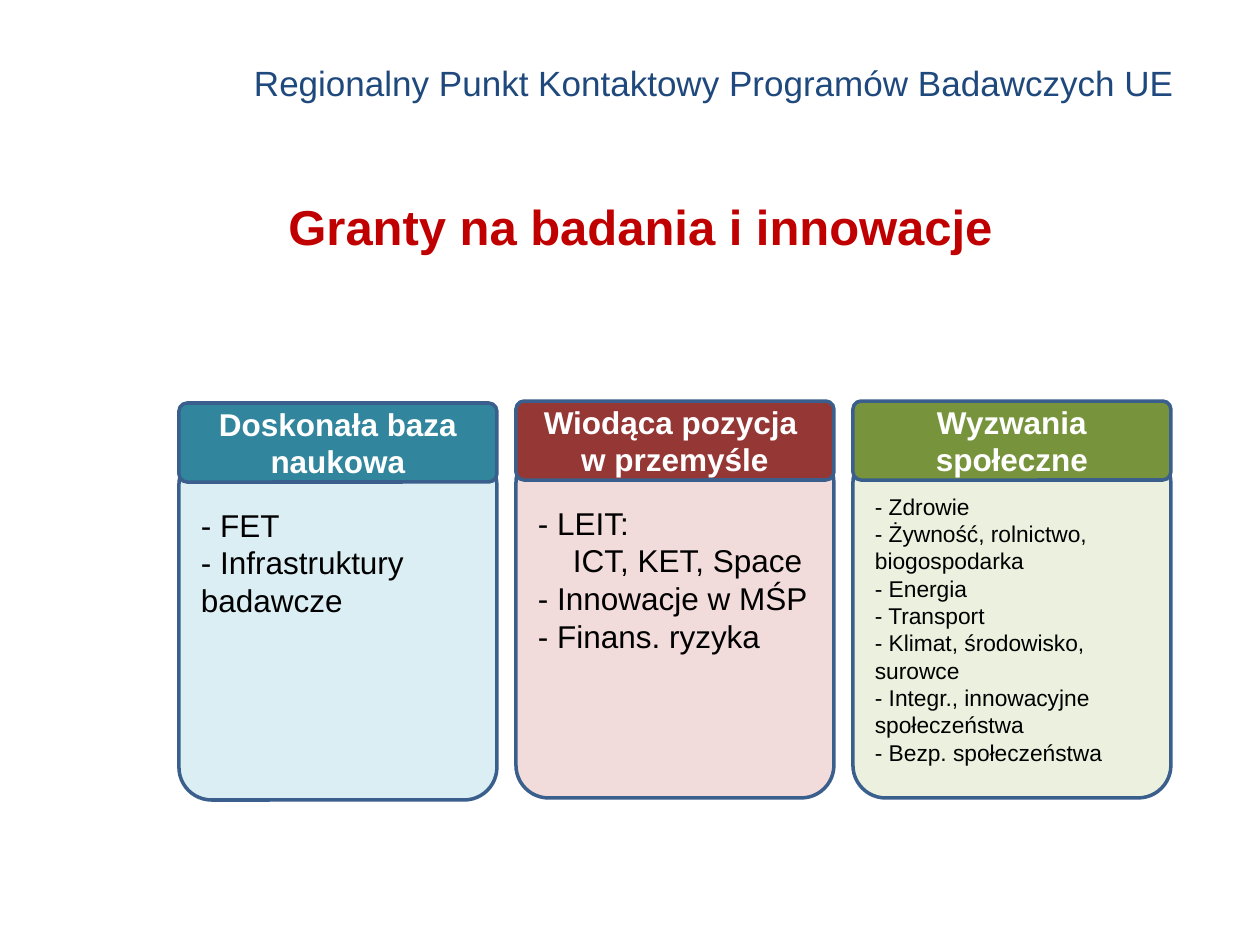
import pptx
import pptx.dml.color
import pptx.enum.shapes
import pptx.enum.text
import pptx.util

EMU_PER_PX = 914400 / 126
FONT = "Arial"
COLOURS = {
    "heading": "1F497D",
    "title": "C00000",
    "outline": "3A5F8C",
    "text": "000000",
    "label": "FFFFFF",
    "teal": "31859C",
    "teal_pale": "DBEEF4",
    "red": "953735",
    "red_pale": "F2DCDB",
    "green": "77933C",
    "green_pale": "EBF1DE",
}
ANCHOR = pptx.enum.text.MSO_ANCHOR
ALIGN = pptx.enum.text.PP_ALIGN

CARD_LEFT, CARD_PITCH, CARD_WIDTH = 179, 337, 318
LABEL_HEIGHT, BODY_OFFSET, BODY_HEIGHT = 79, 49, 348
INDENT = 35

CARDS = [
    ("Doskonała baza naukowa", "teal", 403, 18, 44,
     [("- FET", 0), ("- Infrastruktury badawcze", 0)]),
    ("Wiodąca pozycja \vw przemyśle", "red", 401, 18, 44,
     [("- LEIT:", 0), ("ICT, KET, Space", INDENT),
      ("- Innowacje w MŚP", 0), ("- Finans. ryzyka", 0)]),
    ("Wyzwania społeczne", "green", 401, 13, 33,
     [("- Zdrowie", 0), ("- Żywność, rolnictwo, biogospodarka", 0),
      ("- Energia", 0), ("- Transport", 0),
      ("- Klimat, środowisko, surowce", 0),
      ("- Integr., innowacyjne społeczeństwa", 0),
      ("- Bezp. społeczeństwa", 0)]),
]


def px(length):
    return pptx.util.Emu(round(length * EMU_PER_PX))


def colour(name):
    return pptx.dml.color.RGBColor.from_string(COLOURS[name])


def write(para, text, size=18, color="text", bold=False, align=ALIGN.LEFT, indent=0):
    para.text = text
    para.alignment = align
    para.space_before = pptx.util.Pt(0)
    if indent:
        para._p.get_or_add_pPr().set("marL", str(px(indent)))
    for span in para.runs:
        span.font.name = FONT
        span.font.size = pptx.util.Pt(size)
        span.font.bold = bold
        span.font.color.rgb = colour(color)


class SlideBuilder:
    def __init__(self, deck):
        self.page = deck.slides.add_slide(deck.slide_layouts[5])

    def frame(self, box, anchor=ANCHOR.TOP, top=6):
        frame = box.text_frame
        frame.word_wrap = True
        frame.auto_size = pptx.enum.text.MSO_AUTO_SIZE.NONE
        frame.vertical_anchor = anchor
        frame.margin_top = px(top)
        return frame

    def heading(self, text, left, top, width, height):
        box = self.page.shapes.add_textbox(px(left), px(top), px(width), px(height))
        write(self.frame(box).paragraphs[0], text, size=20, color="heading",
              align=ALIGN.CENTER)

    def title(self, text, left, top, width, height):
        box = self.page.shapes.title
        box.left, box.top, box.width, box.height = map(px, (left, top, width, height))
        write(self.frame(box, top=12).paragraphs[0], text, size=28, color="title",
              bold=True, align=ALIGN.CENTER)

    def panel(self, left, top, width, height, fill):
        box = self.page.shapes.add_shape(
            pptx.enum.shapes.MSO_SHAPE.ROUNDED_RECTANGLE,
            px(left), px(top), px(width), px(height))
        box.adjustments[0] = 0.103
        box.shadow.inherit = False
        box.fill.solid()
        box.fill.fore_color.rgb = colour(fill)
        box.line.color.rgb = colour("outline")
        box.line.width = pptx.util.Pt(2)
        return box

    def card(self, left, label, hue, top, size, inset, items):
        body = self.panel(left, top + BODY_OFFSET, CARD_WIDTH, BODY_HEIGHT, hue + "_pale")
        frame = self.frame(body, top=inset)
        for index, (text, indent) in enumerate(items):
            para = frame.add_paragraph() if index else frame.paragraphs[0]
            write(para, text, size=size, indent=indent)
        header = self.panel(left, top, CARD_WIDTH, LABEL_HEIGHT, hue)
        write(self.frame(header, ANCHOR.MIDDLE).paragraphs[0], label,
              color="label", bold=True, align=ALIGN.CENTER)


def main():
    deck = pptx.Presentation()
    deck.slide_width, deck.slide_height = px(1260), px(945)
    builder = SlideBuilder(deck)
    builder.heading("Regionalny Punkt Kontaktowy Programów Badawczych UE",
                    213, 55, 1002, 55)
    builder.title("Granty na badania i innowacje", 105, 185, 1071, 129)
    for column, card in enumerate(CARDS):
        builder.card(CARD_LEFT + column * CARD_PITCH, *card)
    deck.save("out.pptx")


if __name__ == "__main__":
    main()
